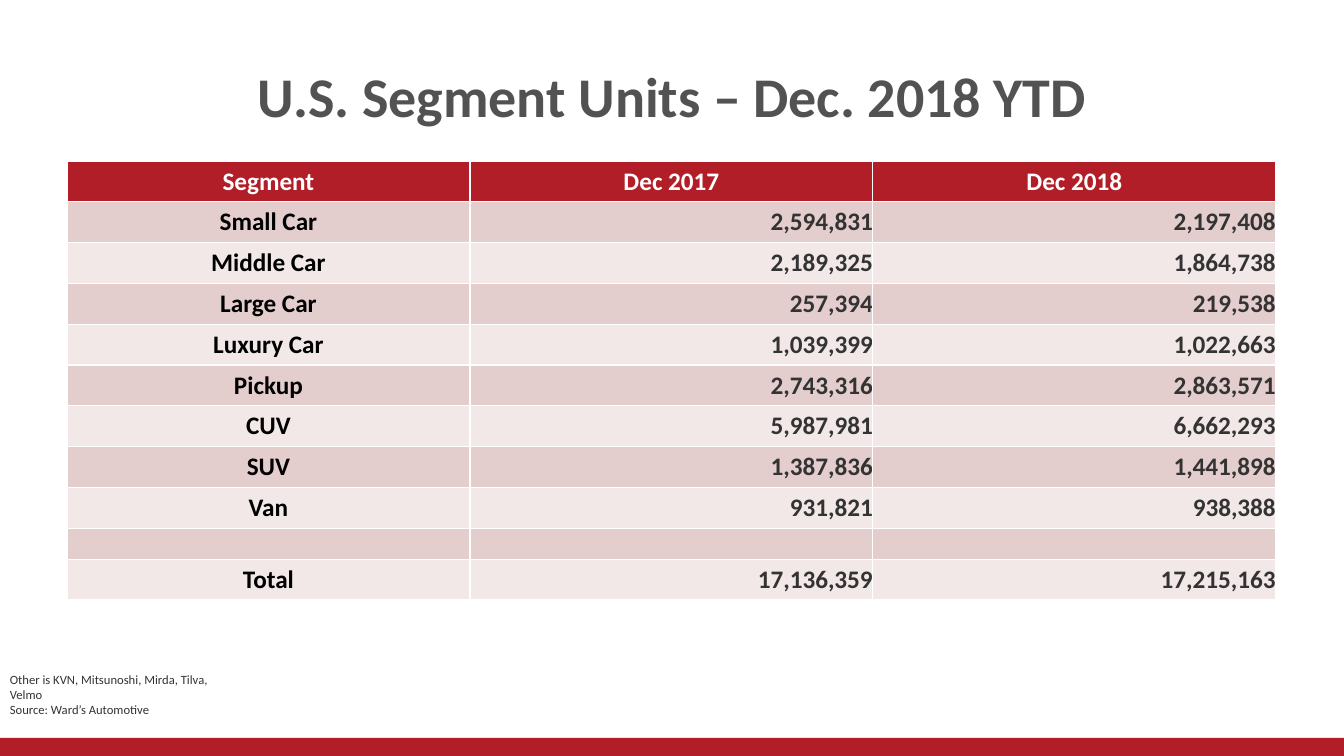
"""Build the U.S. segment units slide with its sales table."""
import pptx
import pptx.dml.color
import pptx.enum.shapes
import pptx.enum.text
import pptx.oxml
import pptx.oxml.ns
import pptx.util

TITLE = "U.S. Segment Units – Dec. 2018 YTD"
HEADER = ("Segment", "Dec 2017", "Dec 2018")
SEGMENTS = [
    ("Small Car", "2,594,831", "2,197,408"),
    ("Middle Car", "2,189,325", "1,864,738"),
    ("Large Car", "257,394", "219,538"),
    ("Luxury Car", "1,039,399", "1,022,663"),
    ("Pickup", "2,743,316", "2,863,571"),
    ("CUV", "5,987,981", "6,662,293"),
    ("SUV", "1,387,836", "1,441,898"),
    ("Van", "931,821", "938,388"),
]
SPACER = ("", "", "")
TOTAL = ("Total", "17,136,359", "17,215,163")
FOOTNOTE = "Other is KVN, Mitsunoshi, Mirda, Tilva, Velmo\vSource: Ward’s Automotive"

RED = pptx.dml.color.RGBColor(0xB2, 0x1E, 0x28)
DARK_BAND = pptx.dml.color.RGBColor(0xE4, 0xCD, 0xCD)
LIGHT_BAND = pptx.dml.color.RGBColor(0xF2, 0xE8, 0xE8)
WHITE = pptx.dml.color.RGBColor(0xFF, 0xFF, 0xFF)
BLACK = pptx.dml.color.RGBColor(0x00, 0x00, 0x00)
TITLE_GREY = pptx.dml.color.RGBColor(0x52, 0x52, 0x52)
TEXT_GREY = pptx.dml.color.RGBColor(0x34, 0x33, 0x33)

FONT = "Calibri"
PX_PER_INCH = 100.8
SLIDE_WIDTH, SLIDE_HEIGHT = 1344, 756
TABLE_LEFT, TABLE_TOP, TABLE_WIDTH, TABLE_HEIGHT = 67, 161, 1209, 439
SPACER_HEIGHT = 31
BAR_TOP = 738

LEFT = pptx.enum.text.PP_ALIGN.LEFT
CENTER = pptx.enum.text.PP_ALIGN.CENTER
RIGHT = pptx.enum.text.PP_ALIGN.RIGHT
MIDDLE = pptx.enum.text.MSO_ANCHOR.MIDDLE


def px(length):
    """Turn pixels into EMU."""
    return pptx.util.Inches(length / PX_PER_INCH)


def write(frame, text, size, color, bold=False, align=LEFT):
    """Put formatted text into the first paragraph of a frame."""
    para = frame.paragraphs[0]
    para.text = text
    para.alignment = align
    for span in para.runs:
        span.font.name = FONT
        span.font.size = pptx.util.Pt(size)
        span.font.bold = bold
        span.font.color.rgb = color


def outline(cell):
    """Draw a white one-point border on every side of a cell."""
    properties = cell._tc.get_or_add_tcPr()
    for position, side in enumerate(("lnL", "lnR", "lnT", "lnB")):
        properties.insert(position, pptx.oxml.parse_xml(
            f'<a:{side} {pptx.oxml.ns.nsdecls("a")} w="{pptx.util.Pt(1)}">'
            f'<a:solidFill><a:srgbClr val="{WHITE}"/></a:solidFill></a:{side}>'))


def add_title(page):
    """Add the slide heading."""
    box = page.shapes.add_textbox(px(67), px(55), px(1210), px(81))
    box.text_frame.word_wrap = True
    box.text_frame.vertical_anchor = MIDDLE
    write(box.text_frame, TITLE, 40, TITLE_GREY, bold=True, align=CENTER)


def add_segment_table(page):
    """Add the banded table of units by segment."""
    rows = [HEADER, *SEGMENTS, SPACER, TOTAL]
    row_height = (TABLE_HEIGHT - SPACER_HEIGHT) / (len(rows) - 1)
    table = page.shapes.add_table(
        len(rows), len(HEADER), px(TABLE_LEFT), px(TABLE_TOP),
        px(TABLE_WIDTH), px(TABLE_HEIGHT)).table
    for column in table.columns:
        column.width = px(TABLE_WIDTH / len(HEADER))
    for row_index, values in enumerate(rows):
        is_header = row_index == 0
        table.rows[row_index].height = px(SPACER_HEIGHT if values is SPACER else row_height)
        band = RED if is_header else DARK_BAND if row_index % 2 else LIGHT_BAND
        for column_index, value in enumerate(values):
            is_label = column_index == 0
            centred = is_header or is_label
            color = WHITE if is_header else BLACK if is_label else TEXT_GREY
            cell = table.cell(row_index, column_index)
            cell.vertical_anchor = MIDDLE
            cell.margin_left = cell.margin_right = px(1 if centred else 0)
            cell.margin_top = cell.margin_bottom = 0
            cell.fill.solid()
            cell.fill.fore_color.rgb = band
            outline(cell)
            write(cell.text_frame, value, 18, color, bold=True,
                  align=CENTER if centred else RIGHT)


def add_footer(page):
    """Add the footnote and the red bar along the bottom edge."""
    box = page.shapes.add_textbox(0, px(667), px(249), px(40))
    box.text_frame.word_wrap = False
    write(box.text_frame, FOOTNOTE, 9, TEXT_GREY)
    bar = page.shapes.add_shape(
        pptx.enum.shapes.MSO_SHAPE.RECTANGLE, 0, px(BAR_TOP),
        px(SLIDE_WIDTH), px(SLIDE_HEIGHT - BAR_TOP))
    bar.shadow.inherit = False
    bar.fill.solid()
    bar.fill.fore_color.rgb = RED
    bar.line.fill.background()


def main():
    """Make the one-slide deck and save it."""
    deck = pptx.Presentation()
    deck.slide_width, deck.slide_height = px(SLIDE_WIDTH), px(SLIDE_HEIGHT)
    page = deck.slides.add_slide(deck.slide_layouts[6])
    add_title(page)
    add_segment_table(page)
    add_footer(page)
    deck.save("out.pptx")


if __name__ == "__main__":
    main()
